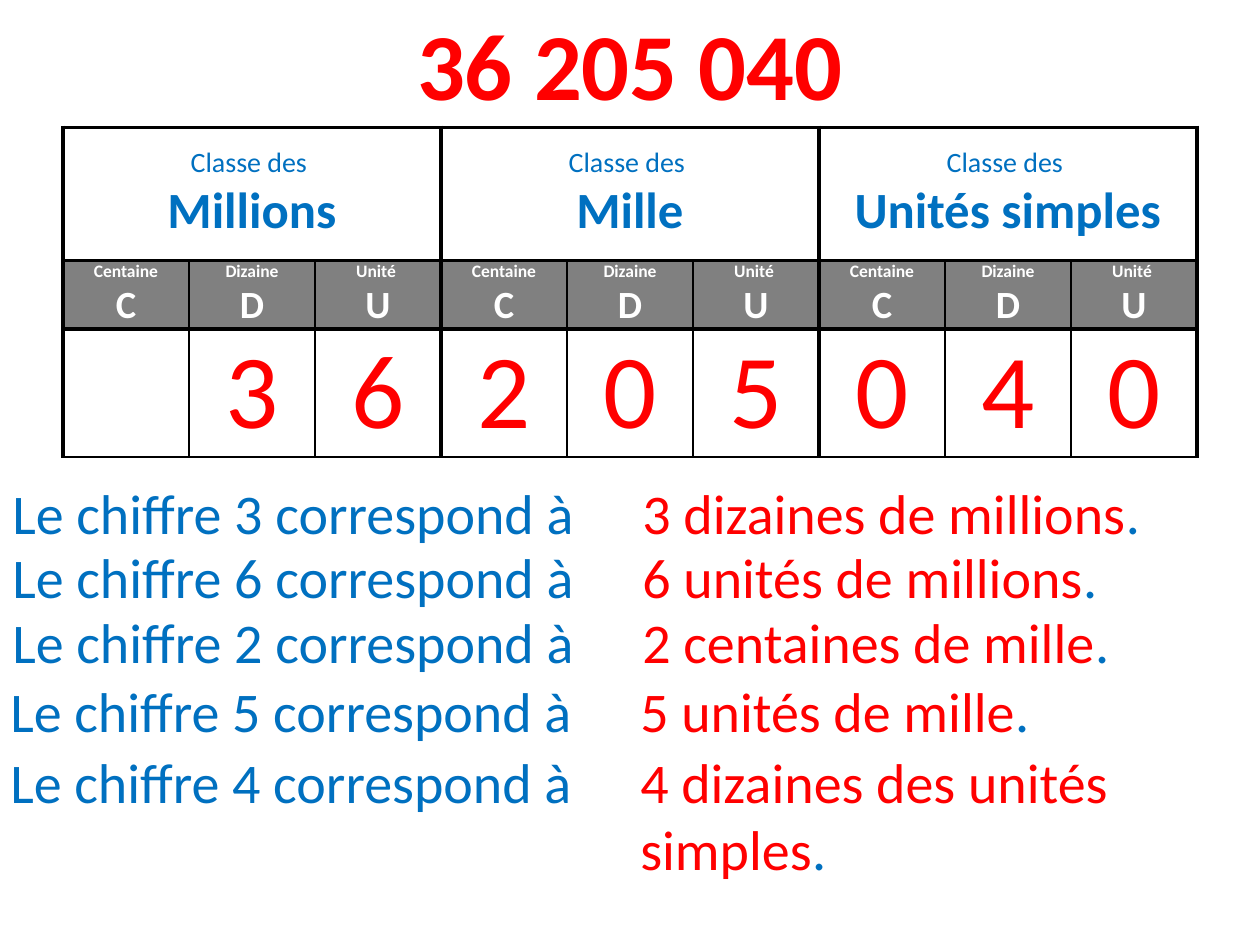
import pptx
import pptx.dml.color
import pptx.enum.text
import pptx.oxml.ns
import pptx.util
import lxml.etree

Pt = pptx.util.Pt
ALIGN = pptx.enum.text.PP_ALIGN
ANCHOR = pptx.enum.text.MSO_ANCHOR
AUTO_SIZE = pptx.enum.text.MSO_AUTO_SIZE

TITLE = "36 205 040"
CLASSES = ["Millions", "Mille", "Unités simples"]
RANKS = [("Centaine", "C"), ("Dizaine", "D"), ("Unité ", "U")]
DIGITS = ["", "3", "6", "2", "0", "5", "0", "4", "0"]
ANSWERS = [
    ("3", "dizaines de millions"),
    ("6", "unités de millions"),
    ("2", "centaines de mille"),
    ("5", "unités de mille"),
    ("4", "dizaines des unités simples"),
]

BLUE, RED, WHITE, GRAY, BLACK = "0070C0", "FF0000", "FFFFFF", "808080", "000000"


def text_format(size, color, bold=False):
    return {"name": "Calibri", "size": Pt(size), "bold": bold, "color": color}


THEME = {
    "title": text_format(54, RED, True),
    "class_label": text_format(16, BLUE),
    "class_name": text_format(29, BLUE, True),
    "rank_label": text_format(10, WHITE, True),
    "rank_letter": text_format(22, WHITE, True),
    "digit": text_format(60, RED),
    "sentence": text_format(32, BLUE),
    "answer": text_format(32, RED),
}

SLIDE_WIDTH, SLIDE_HEIGHT = 720, 540
TABLE_LEFT, TABLE_TOP = 36, 72.72
COLUMN_WIDTH = 72
ROW_HEIGHTS = [76.3, 38.2, 72.7]
THICK, THIN = 2.25, 1
ANSWER_LEFT = 360
ANSWER_TOPS = [270, 306.72, 343.44, 383.04, 423.36]
ANSWER_SHIFTS = [0, 0, 0, -1.2, -1.2]
LINE_HEIGHT = 46


def rgb(color):
    return pptx.dml.color.RGBColor.from_string(color)


def write_paragraphs(text_frame, paragraphs, alignment):
    for index, runs in enumerate(paragraphs):
        paragraph = text_frame.paragraphs[0] if index == 0 else text_frame.add_paragraph()
        paragraph.alignment = alignment
        for text, style in runs:
            run = paragraph.add_run()
            run.text = text
            for name, value in THEME[style].items():
                if name == "color":
                    run.font.color.rgb = rgb(value)
                else:
                    setattr(run.font, name, value)


def add_title(slide):
    title = slide.shapes.title
    frame = {"left": 0, "top": 0, "width": Pt(SLIDE_WIDTH), "height": Pt(TABLE_TOP)}
    for name, value in frame.items():
        setattr(title, name, value)
    title.text_frame.auto_size = AUTO_SIZE.NONE
    title.text_frame.vertical_anchor = ANCHOR.TOP
    write_paragraphs(title.text_frame, [[(TITLE, "title")]], ALIGN.CENTER)


def add_borders(cell, widths):
    properties = cell._tc.get_or_add_tcPr()
    for edge, width in zip("LRTB", widths):
        line = lxml.etree.SubElement(
            properties, pptx.oxml.ns.qn(f"a:ln{edge}"), w=str(Pt(width))
        )
        fill = lxml.etree.SubElement(line, pptx.oxml.ns.qn("a:solidFill"))
        lxml.etree.SubElement(fill, pptx.oxml.ns.qn("a:srgbClr"), val=BLACK)


def fill_cell(cell, paragraphs, borders, color):
    cell_format = {
        "margin_left": Pt(4.5),
        "margin_right": Pt(4.5),
        "margin_top": 0,
        "margin_bottom": 0,
        "vertical_anchor": ANCHOR.MIDDLE,
    }
    for name, value in cell_format.items():
        setattr(cell, name, value)
    add_borders(cell, borders)
    cell.fill.solid()
    cell.fill.fore_color.rgb = rgb(color)
    write_paragraphs(cell.text_frame, paragraphs, ALIGN.CENTER)


def add_number_table(slide):
    columns = len(DIGITS)
    table = slide.shapes.add_table(
        len(ROW_HEIGHTS), columns, Pt(TABLE_LEFT), Pt(TABLE_TOP),
        Pt(COLUMN_WIDTH * columns), Pt(sum(ROW_HEIGHTS)),
    ).table
    table.first_row = False
    table.horz_banding = False
    for row, height in zip(table.rows, ROW_HEIGHTS):
        row.height = Pt(height)

    group = len(RANKS)
    for index, name in enumerate(CLASSES):
        cell = table.cell(0, index * group)
        cell.merge(table.cell(0, index * group + group - 1))
        paragraphs = [[("Classe des ", "class_label")], [(name, "class_name")]]
        fill_cell(cell, paragraphs, [THICK] * 4, WHITE)

    for column, digit in enumerate(DIGITS):
        rank = column % group
        left = THICK if rank == 0 else THIN
        right = THICK if rank == group - 1 else THIN
        label, letter = RANKS[rank]
        paragraphs = [[(label, "rank_label")], [(letter, "rank_letter")]]
        fill_cell(table.cell(1, column), paragraphs, [left, right, THICK, THICK], GRAY)
        paragraphs = [[(digit, "digit")]] if digit else []
        fill_cell(table.cell(2, column), paragraphs, [left, right, THICK, THIN], WHITE)


def add_sentence(slide, left, top, width, runs):
    box = slide.shapes.add_textbox(Pt(left), Pt(top), Pt(width), Pt(LINE_HEIGHT))
    box.text_frame.word_wrap = True
    box.text_frame.auto_size = AUTO_SIZE.SHAPE_TO_FIT_TEXT
    write_paragraphs(box.text_frame, [runs], ALIGN.LEFT)


def main():
    presentation = pptx.Presentation()
    presentation.slide_width = Pt(SLIDE_WIDTH)
    presentation.slide_height = Pt(SLIDE_HEIGHT)
    slide = presentation.slides.add_slide(presentation.slide_layouts.get_by_name("Title Only"))
    add_title(slide)
    add_number_table(slide)
    for (digit, meaning), top, shift in zip(ANSWERS, ANSWER_TOPS, ANSWER_SHIFTS):
        question = [(f"Le chiffre {digit} correspond à", "sentence")]
        answer = [(f"{digit} {meaning}", "answer"), (".", "sentence")]
        add_sentence(slide, shift, top, 371.5, question)
        add_sentence(slide, ANSWER_LEFT + shift, top, 360, answer)
    presentation.save("out.pptx")


if __name__ == "__main__":
    main()
